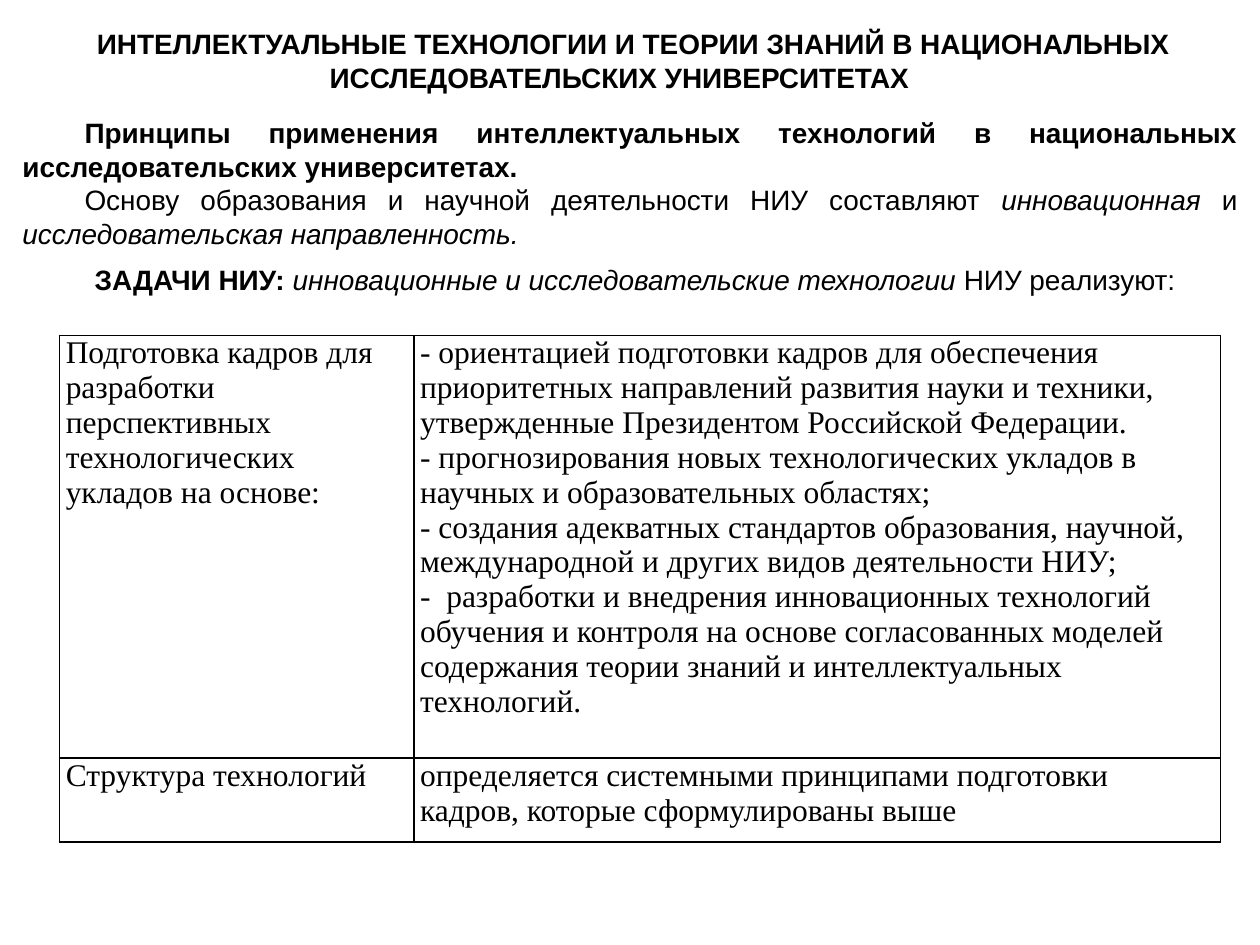
from pptx import Presentation
from pptx.dml.color import RGBColor
from pptx.enum.text import MSO_ANCHOR as Anchor, MSO_AUTO_SIZE as AutoSize, PP_ALIGN as Align
from pptx.oxml.ns import qn
from pptx.util import Pt
from lxml.etree import SubElement

BLACK = RGBColor(0, 0, 0)
WHITE = RGBColor(255, 255, 255)
HEAD_FONT, TABLE_FONT = "Arial", "Times New Roman"

TITLE = ("ИНТЕЛЛЕКТУАЛЬНЫЕ ТЕХНОЛОГИИ И ТЕОРИИ ЗНАНИЙ В НАЦИОНАЛЬНЫХ "
         "ИССЛЕДОВАТЕЛЬСКИХ УНИВЕРСИТЕТАХ")
PRINCIPLES = [
    [("Принципы применения интеллектуальных технологий в национальных "
      "исследовательских университетах.", "b")],
    [("Основу образования и научной деятельности НИУ составляют ", ""),
     ("инновационная", "i"),
     (" и ", ""),
     ("исследовательская направленность.", "i")],
]
TASKS = [
    [("ЗАДАЧИ НИУ: ", "b"),
     ("инновационные и исследовательские технологии ", "i"),
     ("НИУ реализуют:", "")],
]
TECHNOLOGIES = [
    (["Подготовка кадров для разработки перспективных технологических укладов на основе:"],
     ["- ориентацией подготовки кадров для обеспечения приоритетных направлений развития "
      "науки и техники, утвержденные Президентом Российской Федерации.",
      "- прогнозирования новых технологических укладов в научных и образовательных областях;",
      "- создания адекватных стандартов образования, научной, международной и других видов "
      "деятельности НИУ;",
      "-  разработки и внедрения инновационных технологий обучения и контроля на основе "
      "согласованных моделей содержания теории знаний и интеллектуальных технологий."]),
    (["Структура технологий"],
     ["определяется системными принципами подготовки кадров, которые сформулированы выше"]),
]


def write(frame, paragraphs, font, size, align, indent=0):
    for index, pieces in enumerate(paragraphs):
        paragraph = frame.paragraphs[0] if index == 0 else frame.add_paragraph()
        paragraph.alignment = align
        if indent:
            props = paragraph._p.get_or_add_pPr()
            props.set("marL", "0")
            props.set("indent", str(Pt(indent)))
        for words, style in pieces:
            run = paragraph.add_run()
            run.text = words
            run.font.name = font
            run.font.size = Pt(size)
            run.font.bold = style == "b"
            run.font.italic = style == "i"
            run.font.color.rgb = BLACK


def set_frame(frame):
    frame.word_wrap = True
    frame.auto_size = AutoSize.NONE
    frame.vertical_anchor = Anchor.MIDDLE


def place_title(slide, left, top, width, height):
    title = slide.shapes.title
    title.left, title.top = Pt(left), Pt(top)
    title.width, title.height = Pt(width), Pt(height)
    set_frame(title.text_frame)
    write(title.text_frame, [[(TITLE, "b")]], HEAD_FONT, 16, Align.CENTER, 16)


def place_statement(slide, paragraphs, left, top, width, height):
    statement = slide.shapes.add_textbox(Pt(left), Pt(top), Pt(width), Pt(height))
    set_frame(statement.text_frame)
    write(statement.text_frame, paragraphs, HEAD_FONT, 16, Align.JUSTIFY, 35.5)


def draw_borders(cell):
    props = cell._tc.get_or_add_tcPr()
    for side in ("a:lnL", "a:lnR", "a:lnT", "a:lnB"):
        border = SubElement(props, qn(side), w=str(Pt(1)))
        SubElement(SubElement(border, qn("a:solidFill")), qn("a:srgbClr"), val=str(BLACK))


def place_technologies(slide, left, top, width, height):
    table = slide.shapes.add_table(
        len(TECHNOLOGIES), 2, Pt(left), Pt(top), Pt(width), Pt(height)).table
    table.first_row = table.horz_banding = False
    subject_width, structure_height = 202.5, 48
    table.columns[0].width = Pt(subject_width)
    table.columns[1].width = Pt(width - subject_width)
    table.rows[0].height = Pt(height - structure_height)
    table.rows[1].height = Pt(structure_height)
    for row, entries in enumerate(TECHNOLOGIES):
        for column, lines in enumerate(entries):
            cell = table.cell(row, column)
            cell.margin_left = cell.margin_right = Pt(3.6)
            cell.margin_top = cell.margin_bottom = 0
            draw_borders(cell)
            cell.fill.solid()
            cell.fill.fore_color.rgb = WHITE
            write(cell.text_frame, [[(line, "")] for line in lines],
                  TABLE_FONT, 18, Align.LEFT)


def main():
    deck = Presentation()
    deck.slide_width, deck.slide_height = Pt(720), Pt(540)
    slide = deck.slides.add_slide(deck.slide_layouts[5])
    place_title(slide, 28, 11.5, 652, 46)
    place_statement(slide, PRINCIPLES, 5.75, 62, 708.5, 85)
    place_statement(slide, TASKS, 11.5, 146.5, 703.5, 26.5)
    place_technologies(slide, 34, 191.75, 663.5, 289.5)
    deck.save("out.pptx")


if __name__ == "__main__":
    main()
